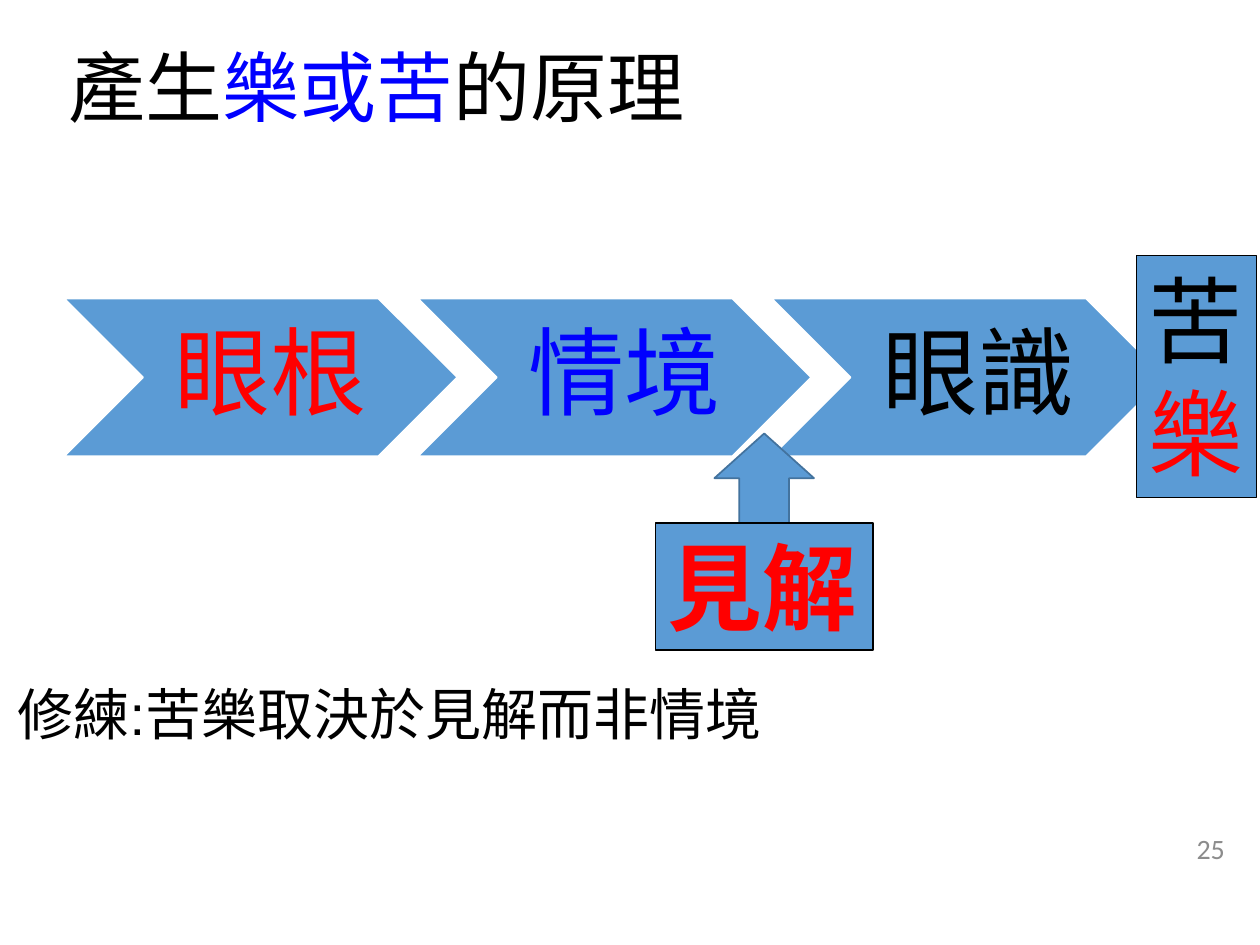
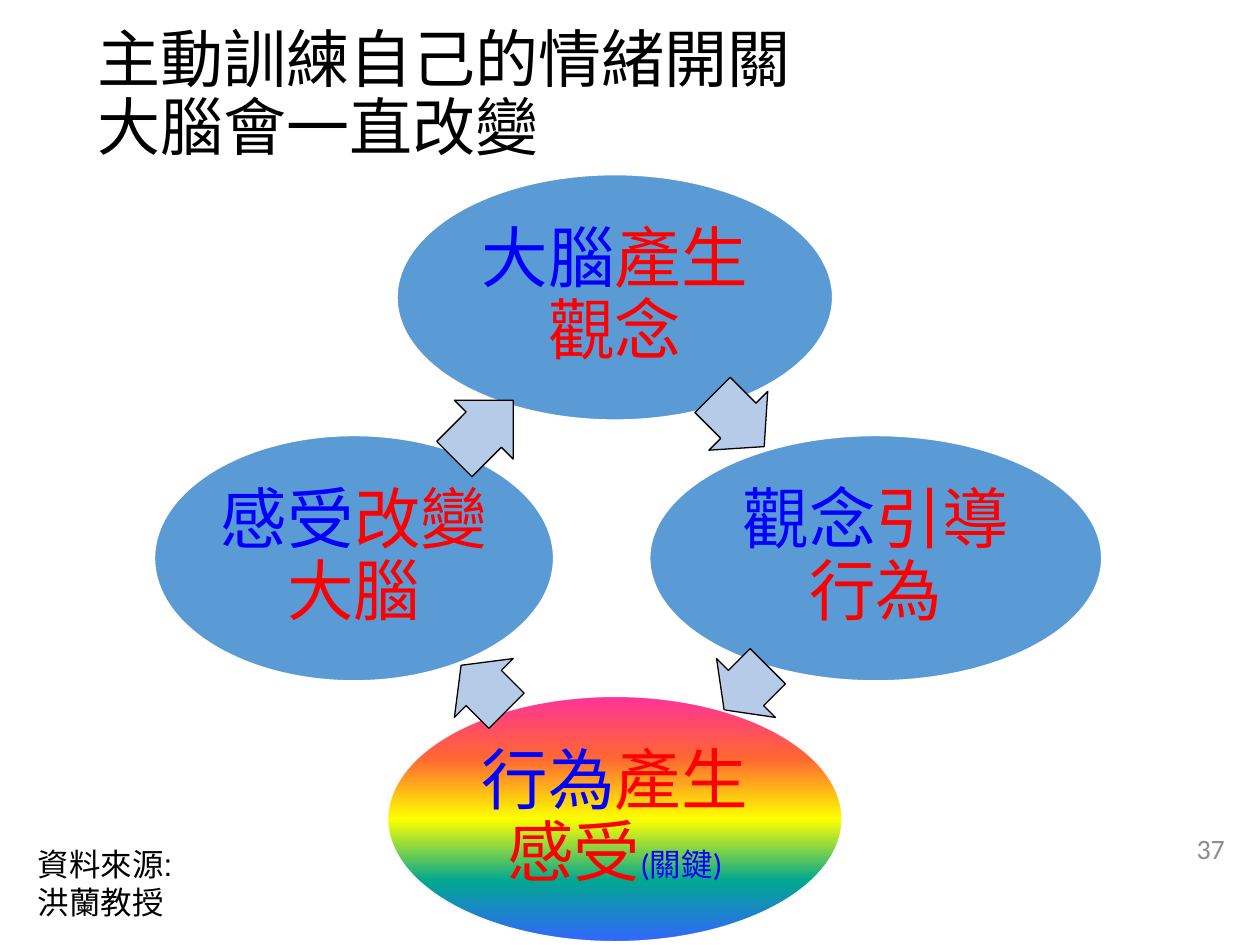
from math import cos, radians, sin

from lxml import etree
from pptx import Presentation
from pptx.dml.color import RGBColor
from pptx.enum.shapes import MSO_SHAPE as Shape
from pptx.enum.text import MSO_ANCHOR as Anchor, MSO_AUTO_SIZE as AutoSize, PP_ALIGN as Align
from pptx.oxml import parse_xml
from pptx.oxml.ns import nsdecls, qn
from pptx.util import Inches, Pt

COLORS = {
    "black": "000000", "white": "FFFFFF", "red": "FF0000", "blue": "0000FF",
    "fill": "5B9BD5", "edge": "43739E", "arrow": "B5CBE7", "number": "8C8C8C",
}
RAINBOW = ["FF3399", "FF6633", "FFFF00", "01A78F", "3366FF"]
CJK_FONT = "Noto Sans CJK SC"


def color(name):
    return RGBColor.from_string(COLORS[name])


def add_run(para, text, size, tint="black", font="Arial", bold=False):
    span = para.add_run()
    span.text = text
    span.font.size = Pt(size)
    span.font.name = font
    span.font.bold = bold
    span.font.color.rgb = color(tint)
    east_asian = etree.SubElement(span.font._element, qn("a:ea"))
    east_asian.set("typeface", CJK_FONT)


def set_frame(box, anchor=Anchor.TOP, insets=(0.1, 0.05, 0.1, 0.05), wrap=True):
    frame = box.text_frame
    frame.auto_size = AutoSize.NONE
    frame.word_wrap = wrap
    frame.vertical_anchor = anchor
    (frame.margin_left, frame.margin_top,
     frame.margin_right, frame.margin_bottom) = map(Inches, insets)
    return frame


def add_block(page, kind, box, fill="fill", line="white", width=1):
    block = page.shapes.add_shape(kind, *map(Inches, box))
    block.shadow.inherit = False
    block.fill.solid()
    block.fill.fore_color.rgb = color(fill)
    block.line.color.rgb = color(line)
    block.line.width = Pt(width)
    return block


def add_label(block, runs, insets):
    """Centre a paragraph of (text, tint, size) runs in a diagram shape."""
    para = set_frame(block, Anchor.MIDDLE, insets).paragraphs[0]
    para.alignment = Align.CENTER
    para.line_spacing = 0.9
    for text, tint, size in runs:
        add_run(para, text, size, tint, "Calibri")


def add_box(page, box, lines, bold=False):
    """Outlined box holding one large (text, tint) per line."""
    block = add_block(page, Shape.RECTANGLE, box, line="black", width=0.75)
    frame = set_frame(block, Anchor.TOP, wrap=False)
    for index, (text, tint) in enumerate(lines):
        para = frame.add_paragraph() if index else frame.paragraphs[0]
        para.alignment = Align.LEFT
        add_run(para, text, 54, tint, bold=bold)


def add_note(page, box, text, size):
    note = page.shapes.add_textbox(*map(Inches, box))
    add_run(set_frame(note).paragraphs[0], text, size)


def add_page(deck, box, title_lines, size, number):
    """Page with its title, given as lines of (text, tint) runs, and number."""
    page = deck.slides.add_slide(deck.slide_layouts[5])
    title = page.shapes.title
    title.left, title.top, title.width, title.height = map(Inches, box)
    para = set_frame(title, Anchor.MIDDLE).paragraphs[0]
    para.alignment = Align.LEFT
    para.line_spacing = 0.9
    for index, line in enumerate(title_lines):
        if index:
            para.add_line_break()
        for text, tint in line:
            add_run(para, text, size, tint, CJK_FONT)

    footer = page.shapes.add_textbox(*map(Inches, (7.57, 6.53, 2.25, 0.4)))
    para = set_frame(footer, Anchor.MIDDLE).paragraphs[0]
    para.alignment = Align.RIGHT
    add_run(para, number, 16, "number", "Calibri")
    return page


def add_chevrons(page, box, steps):
    left, top, width, height = box
    pitch = 0.9 * width
    for index, (text, tint) in enumerate(steps):
        chevron = add_block(page, Shape.CHEVRON, (left + index * pitch, top, width, height))
        add_label(chevron, [(text, tint, 55)], (0.24, 0.08, 0.08, 0.08))


def fill_rainbow(block):
    """Vertical gradient with evenly spaced stops."""
    last = len(RAINBOW) - 1
    stops = "".join(
        f'<a:gs pos="{100000 * index // last}"><a:srgbClr val="{tint}"/></a:gs>'
        for index, tint in enumerate(RAINBOW))
    gradient = parse_xml(f'<a:gradFill {nsdecls("a")} rotWithShape="1"><a:gsLst>{stops}'
                         '</a:gsLst><a:lin ang="5400000" scaled="0"/></a:gradFill>')
    properties = block._element.spPr
    properties.replace(properties.find(qn("a:solidFill")), gradient)


def add_cycle(page, center, radius, stages):
    """Ovals clockwise from the top, each followed by its arrow."""
    center_x, center_y = center
    oval_height = 1.95
    for index, (oval_width, runs, rainbow, arrow_offset, arrow_size) in enumerate(stages):
        turn = index * 360 / len(stages)
        left = center_x + radius * sin(radians(turn)) - oval_width / 2
        top = center_y - radius * cos(radians(turn)) - oval_height / 2
        oval = add_block(page, Shape.OVAL, (left, top, oval_width, oval_height))
        if rainbow:
            fill_rainbow(oval)
        add_label(oval, runs, (0.05,) * 4)

        (shift_x, shift_y), (width, height) = arrow_offset, arrow_size
        arrow = add_block(page, Shape.RIGHT_ARROW,
                          (center_x + shift_x - width / 2, center_y + shift_y - height / 2,
                           width, height), "arrow", "black", 0.75)
        arrow.adjustments[0] = 0.6
        arrow.adjustments[1] = 0.5
        arrow.rotation = turn + 45


def build_principle(deck):
    title = [[("產生", "black"), ("樂或苦", "blue"), ("的原理", "black")]]
    page = add_page(deck, (0.44, 0, 8.62, 1.45), title, 44, "25")
    add_chevrons(page, (0.51, 2.37, 3.12, 1.25),
                 [("眼根", "red"), ("情境", "blue"), ("眼識", "black")])
    # View that feeds the chain, and the outcome
    add_block(page, Shape.UP_ARROW, (5.67, 3.44, 0.79, 0.71), line="edge")
    add_box(page, (5.2, 4.15, 1.73, 1.01), [("見解", "red")], bold=True)
    add_box(page, (9.02, 2.03, 0.95, 1.92), [("苦", "black"), ("樂", "red")])
    add_note(page, (0.04, 5.34, 6.38, 0.64), "修練:苦樂取決於見解而非情境", 32)


def build_brain_cycle(deck):
    title = [[("主動訓練自己的情緒開關", "black")], [("大腦會一直改變", "black")]]
    page = add_page(deck, (0.67, 0.21, 8.9, 1.1), title, 36, "37")

    def pair(subject, effect):
        return [(subject, "blue", 38), (effect, "red", 38)]

    # Oval width, runs, rainbow fill, arrow offset from the centre, arrow size
    stages = [
        (3.46, pair("大腦", "產生觀念"), False, (0.98, -1.09), (0.58, 0.66)),
        (3.59, pair("觀念", "引導行為"), False, (1.04, 1.03), (0.49, 0.66)),
        (3.61, pair("行為", "產生感受") + [("(關鍵)", "blue", 18)], True,
         (-1.04, 1.03), (0.51, 0.66)),
        (3.17, pair("感受", "改變大腦"), False, (-1.04, -1.02), (0.66, 0.66)),
    ]
    add_cycle(page, (4.88, 4.43), 2.07, stages)
    add_note(page, (0.2, 6.66, 1.34, 0.71), "資料來源:洪蘭教授", 18)


def main():
    deck = Presentation()
    deck.slide_width, deck.slide_height = Inches(10), Inches(7.5)
    build_principle(deck)
    build_brain_cycle(deck)
    deck.save("out.pptx")


if __name__ == "__main__":
    main()
